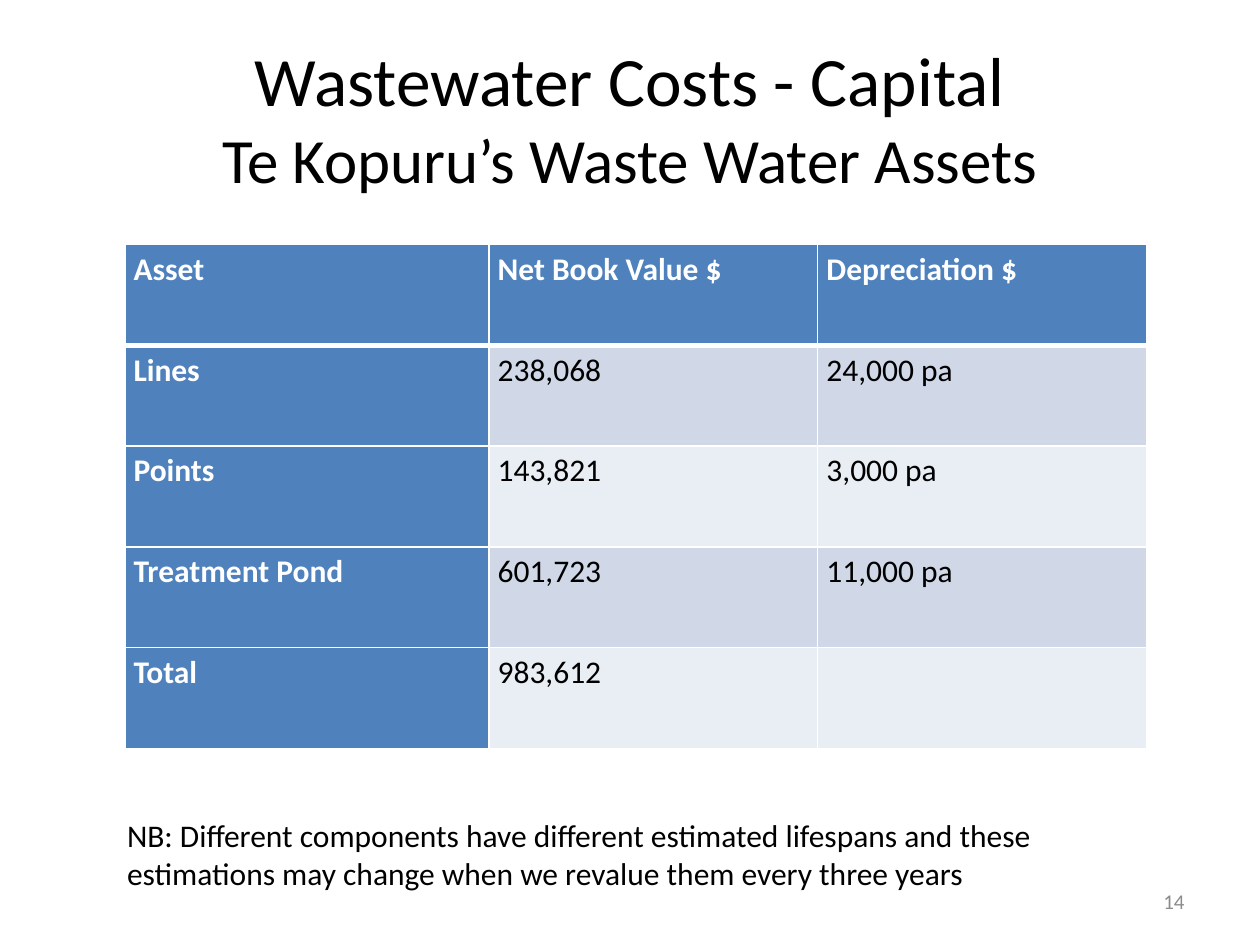
from lxml import etree
from pptx import Presentation
from pptx.dml.color import RGBColor
from pptx.enum import text
from pptx.oxml.ns import qn
from pptx.util import Inches, Pt

TITLE_LINES = [("Wastewater Costs - Capital", 39.6), ("Te Kopuru’s Waste Water Assets", 36)]
ASSET_ROWS = [
    ("Asset", "Net Book Value $", "Depreciation $"),
    ("Lines", "238,068", "24,000 pa"),
    ("Points", "143,821", "3,000 pa"),
    ("Treatment Pond", "601,723", "11,000 pa"),
    ("Total", "983,612", ""),
]
COLUMN_WIDTHS = (2.89, 2.61, 2.61)
ROW_HEIGHT = 0.8
NOTE = (
    "NB: Different components have different estimated lifespans and these "
    "estimations may change when we revalue them every three years"
)
PAGE_NUMBER = "14"
THEME = {
    "font": "Calibri",
    "body_size": 18,
    "number_size": 12,
    "ink": "000000",
    "light": "FFFFFF",
    "muted": "8C8C8C",
    "header": "4F81BD",
    "bands": ("D0D8E8", "E9EDF4"),
    "rule": 1,
    "header_rule": 3,
}


def add_run(paragraph, words, size, color, bold=False):
    run = paragraph.add_run()
    run.text = words
    run.font.name = THEME["font"]
    run.font.size = Pt(size)
    run.font.bold = bold
    run.font.color.rgb = RGBColor.from_string(color)


def add_title(slide):
    title = slide.shapes.title
    title.left, title.top, title.width, title.height = map(Inches, (0.5, 0.3, 9, 1.25))
    frame = title.text_frame
    frame.auto_size = text.MSO_AUTO_SIZE.NONE
    frame.vertical_anchor = text.MSO_ANCHOR.MIDDLE
    paragraph = frame.paragraphs[0]
    paragraph.alignment = text.PP_ALIGN.CENTER
    for index, (words, size) in enumerate(TITLE_LINES):
        if index:
            paragraph.add_line_break()
        add_run(paragraph, words, size, THEME["ink"])


def add_text(slide, box, words, size, color, align, anchor):
    frame = slide.shapes.add_textbox(*map(Inches, box)).text_frame
    frame.word_wrap = True
    frame.vertical_anchor = anchor
    paragraph = frame.paragraphs[0]
    paragraph.alignment = align
    add_run(paragraph, words, size, color)


def set_borders(cell, widths):
    properties = cell._tc.get_or_add_tcPr()
    for position, (side, width) in enumerate(widths.items()):
        line = etree.Element(qn(f"a:ln{side}"), w=str(Pt(width)))
        fill = etree.SubElement(line, qn("a:solidFill"))
        etree.SubElement(fill, qn("a:srgbClr"), val=THEME["light"])
        properties.insert(position, line)


def add_asset_table(slide):
    table = slide.shapes.add_table(
        len(ASSET_ROWS), len(COLUMN_WIDTHS), Inches(0.99), Inches(1.94),
        Inches(sum(COLUMN_WIDTHS)), Inches(ROW_HEIGHT * len(ASSET_ROWS)),
    ).table
    table.first_col = True
    for column, width in zip(table.columns, COLUMN_WIDTHS):
        column.width = Inches(width)
    for row_index, values in enumerate(ASSET_ROWS):
        table.rows[row_index].height = Inches(ROW_HEIGHT)
        for column_index, words in enumerate(values):
            cell = table.cell(row_index, column_index)
            heading = row_index == 0 or column_index == 0
            color = THEME["header"] if heading else THEME["bands"][(row_index - 1) % 2]
            cell.fill.solid()
            cell.fill.fore_color.rgb = RGBColor.from_string(color)
            cell.margin_left = cell.margin_right = Inches(0.07)
            cell.margin_top = cell.margin_bottom = 0
            top = THEME["header_rule"] if row_index == 1 else THEME["rule"]
            bottom = THEME["header_rule"] if row_index == 0 else THEME["rule"]
            set_borders(cell, {"L": THEME["rule"], "R": THEME["rule"], "T": top, "B": bottom})
            if words:
                paragraph = cell.text_frame.paragraphs[0]
                paragraph.line_spacing = 1.15
                ink = THEME["light"] if heading else THEME["ink"]
                add_run(paragraph, words, THEME["body_size"], ink, heading)


def main():
    presentation = Presentation()
    presentation.slide_width, presentation.slide_height = Inches(10), Inches(7.5)
    slide = presentation.slides.add_slide(presentation.slide_layouts.get_by_name("Title Only"))
    add_title(slide)
    add_text(slide, (7.17, 6.95, 2.33, 0.4), PAGE_NUMBER, THEME["number_size"],
             THEME["muted"], text.PP_ALIGN.RIGHT, text.MSO_ANCHOR.MIDDLE)
    add_asset_table(slide)
    add_text(slide, (0.91, 6.43, 8.19, 0.71), NOTE, THEME["body_size"],
             THEME["ink"], text.PP_ALIGN.LEFT, text.MSO_ANCHOR.TOP)
    presentation.save("out.pptx")


if __name__ == "__main__":
    main()
